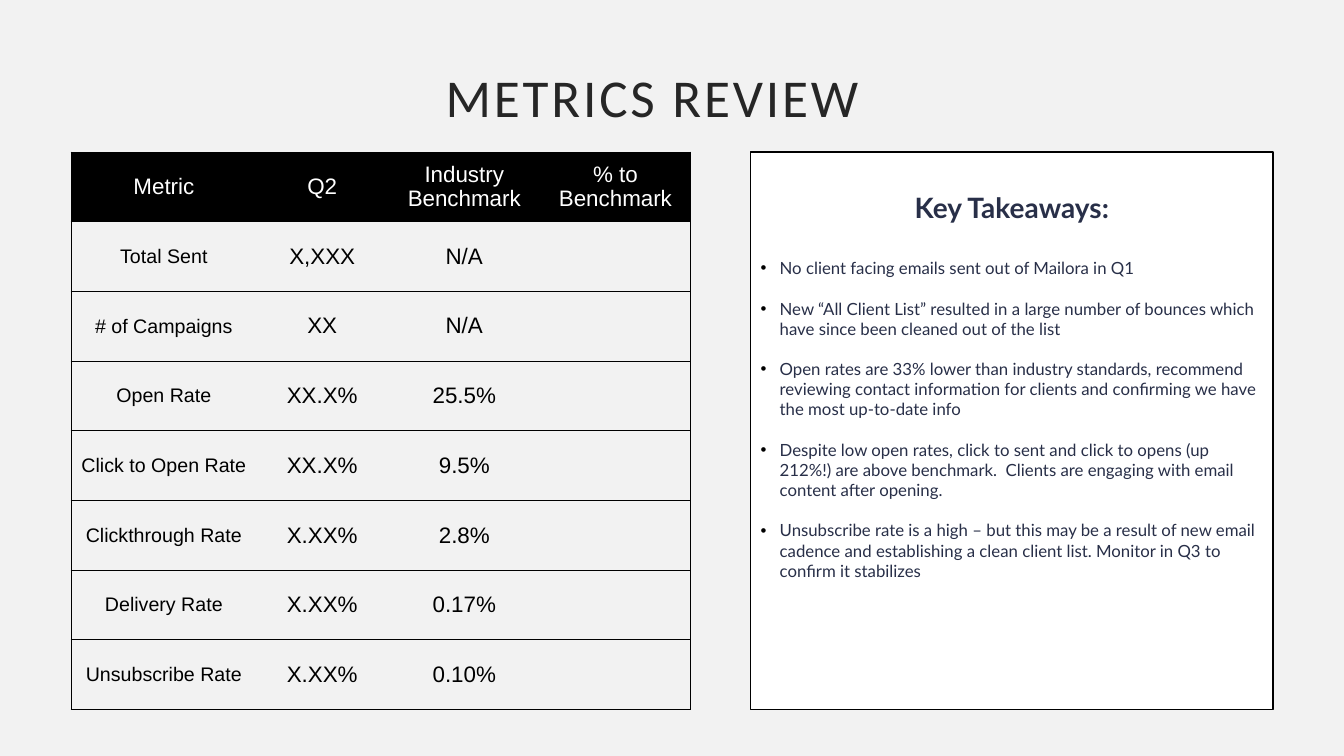
from lxml.etree import SubElement
from pptx import Presentation
from pptx.dml.color import RGBColor
from pptx.enum.shapes import MSO_SHAPE
from pptx.enum.text import MSO_ANCHOR, PP_ALIGN
from pptx.oxml.ns import qn
from pptx.util import Cm, Pt

BACKGROUND = RGBColor(0xF2, 0xF2, 0xF2)
BLACK = RGBColor(0, 0, 0)
WHITE = RGBColor(0xFF, 0xFF, 0xFF)
CHARCOAL = RGBColor(0x26, 0x26, 0x26)
NAVY = RGBColor(0x28, 0x2F, 0x48)
NO_TABLE_STYLE = "{2D5ABB26-0587-4C30-8999-92F81FD0307C}"

METRICS = [
    ("Metric", "Q2", "Industry Benchmark", "% to Benchmark"),
    ("Total Sent", "X,XXX", "N/A", ""),
    ("# of Campaigns", "XX", "N/A", ""),
    ("Open Rate", "XX.X%", "25.5%", ""),
    ("Click to Open Rate", "XX.X%", "9.5%", ""),
    ("Clickthrough Rate", "X.XX%", "2.8%", ""),
    ("Delivery Rate", "X.XX%", "0.17%", ""),
    ("Unsubscribe Rate", "X.XX%", "0.10%", ""),
]
COLUMN_WIDTHS = [4.68, 3.3, 3.86, 3.76]
TAKEAWAYS = [
    "No client facing emails sent out of Mailora in Q1",
    "New “All Client List” resulted in a large number of bounces which have since "
    "been cleaned out of the list",
    "Open rates are 33% lower than industry standards, recommend reviewing contact "
    "information for clients and confirming we have the most up-to-date info",
    "Despite low open rates, click to sent and click to opens (up 212%!) are above "
    "benchmark.  Clients are engaging with email content after opening.",
    "Unsubscribe rate is a high – but this may be a result of new email cadence and "
    "establishing a clean client list. Monitor in Q3 to confirm it stabilizes",
]


def add_text(paragraph, text, color, **font_values):
    run = paragraph.add_run()
    run.text = text
    run.font.color.rgb = color
    for name, value in font_values.items():
        setattr(run.font, name, value)
    return run


def add_border(cell, side):
    line = SubElement(cell._tc.get_or_add_tcPr(), qn(f"a:ln{side}"), w=str(Pt(0.5)))
    fill = SubElement(line, qn("a:solidFill"))
    SubElement(fill, qn("a:srgbClr"), val=str(BLACK))


presentation = Presentation()
presentation.slide_width, presentation.slide_height = Cm(33.87), Cm(19.05)
slide = presentation.slides.add_slide(presentation.slide_layouts[5])
slide.background.fill.solid()
slide.background.fill.fore_color.rgb = BACKGROUND

# Title
title = slide.shapes.title
title_box = {"left": Cm(0), "top": Cm(1.6), "width": Cm(32.87), "height": Cm(1.78)}
for name, value in title_box.items():
    setattr(title, name, value)
title.text_frame.vertical_anchor = MSO_ANCHOR.BOTTOM
paragraph = title.text_frame.paragraphs[0]
paragraph.alignment = PP_ALIGN.CENTER
paragraph.line_spacing = 0.9
run = add_text(paragraph, "METRICS REVIEW", CHARCOAL, name="Calibri", size=Pt(38))
run._r.get_or_add_rPr().set("spc", "200")

# Key takeaways panel
panel = slide.shapes.add_shape(
    MSO_SHAPE.RECTANGLE, Cm(18.92), Cm(3.83), Cm(13.16), Cm(14.05))
panel.shadow.inherit = False
panel.fill.solid()
panel.fill.fore_color.rgb = WHITE
panel.line.color.rgb = BLACK
panel.line.width = Pt(1)
text_frame = panel.text_frame
text_frame.word_wrap = True
text_frame.vertical_anchor = MSO_ANCHOR.TOP
text_frame.margin_top = Cm(0.98)
heading = text_frame.paragraphs[0]
heading.alignment = PP_ALIGN.CENTER
heading.space_after = Pt(24)
add_text(heading, "Key Takeaways:", NAVY, name="Lato", size=Pt(20), bold=True)

for index, takeaway in enumerate(TAKEAWAYS):
    paragraph = text_frame.add_paragraph()
    paragraph.alignment = PP_ALIGN.LEFT
    paragraph.space_before = Pt(14.4 if index else 0)
    properties = paragraph._p.get_or_add_pPr()
    properties.set("marL", str(Cm(0.48)))
    properties.set("indent", str(-Cm(0.48)))
    bullet_color = SubElement(properties, qn("a:buClr"))
    SubElement(bullet_color, qn("a:srgbClr"), val=str(BLACK))
    SubElement(properties, qn("a:buFont"), typeface="Arial")
    SubElement(properties, qn("a:buChar"), char="•")
    add_text(paragraph, takeaway, NAVY, name="Lato", size=Pt(12), bold=False)

# Metrics table
table_frame = slide.shapes.add_table(
    len(METRICS), len(COLUMN_WIDTHS), Cm(1.79), Cm(3.83), Cm(15.6), Cm(14.05))
table = table_frame.table
table.first_row = table.horz_banding = False
table._tbl.tblPr.find(qn("a:tableStyleId")).text = NO_TABLE_STYLE
for column, width in zip(table.columns, COLUMN_WIDTHS):
    column.width = Cm(width)

last_column = len(COLUMN_WIDTHS) - 1
for row_index, values in enumerate(METRICS):
    is_header = row_index == 0
    for column_index, value in enumerate(values):
        cell = table.cell(row_index, column_index)
        cell.vertical_anchor = MSO_ANCHOR.MIDDLE
        if column_index == 0:
            add_border(cell, "L")
        if column_index == last_column:
            add_border(cell, "R")
        if is_header:
            add_border(cell, "T")
        add_border(cell, "B")
        if is_header:
            cell.fill.solid()
            cell.fill.fore_color.rgb = BLACK
        else:
            cell.fill.background()
        if value:
            paragraph = cell.text_frame.paragraphs[0]
            paragraph.alignment = PP_ALIGN.CENTER
            is_label = column_index == 0 and not is_header
            add_text(paragraph, value, WHITE if is_header else BLACK,
                     name="Arial", size=Pt(14 if is_label else 16))

presentation.save("out.pptx")
